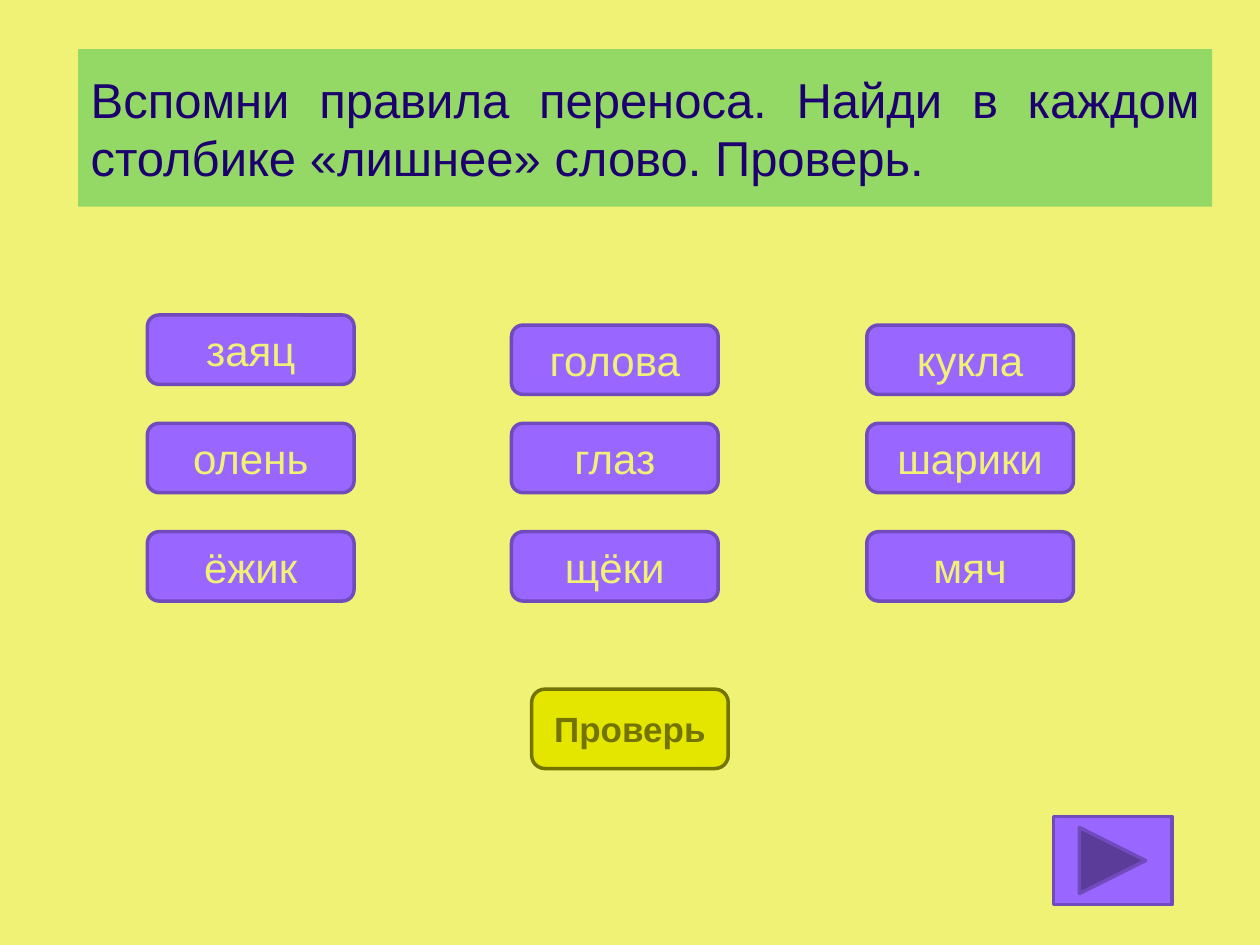
from lxml.etree import SubElement
from pptx import Presentation
from pptx.dml.color import RGBColor
from pptx.enum.shapes import MSO_SHAPE
from pptx.enum.text import MSO_ANCHOR, PP_ALIGN
from pptx.oxml.ns import qn
from pptx.util import Inches, Pt

BACKGROUND = "EFF274"
VIOLET = "9966FF"
VIOLET_LINE = "714BBD"
YELLOW = "E5E600"
OLIVE = "737300"


def color(value):
    return RGBColor.from_string(value)


class ExerciseSlide:
    font_name = "Arial"
    line_width = Pt(2)

    def __init__(self, presentation):
        self.slide = presentation.slides.add_slide(presentation.slide_layouts[5])
        fill = self.slide.background.fill
        fill.solid()
        fill.fore_color.rgb = color(BACKGROUND)

    def add_text(self, shape, text, size, text_color, alignment, bold=False):
        frame = shape.text_frame
        frame.word_wrap = True
        frame.vertical_anchor = MSO_ANCHOR.MIDDLE
        paragraph = frame.paragraphs[0]
        paragraph.alignment = alignment
        run = paragraph.add_run()
        run.text = text
        run.font.name = self.font_name
        run.font.size = Pt(size)
        run.font.bold = bold
        run.font.color.rgb = color(text_color)

    def title(self, text, left, top, width, height):
        shape = self.slide.shapes.title
        shape.left, shape.top = Inches(left), Inches(top)
        shape.width, shape.height = Inches(width), Inches(height)
        shape.fill.solid()
        shape.fill.fore_color.rgb = color("00B050")
        fill_color = shape.element.spPr.find(qn("a:solidFill"))[0]
        SubElement(fill_color, qn("a:alpha"), val="38000")
        self.add_text(shape, text, 28, "1C006E", PP_ALIGN.JUSTIFY)

    def shape(self, kind, left, top, width, height, fill, line):
        shape = self.slide.shapes.add_shape(
            kind, Inches(left), Inches(top), Inches(width), Inches(height)
        )
        shape.shadow.inherit = False
        shape.fill.solid()
        shape.fill.fore_color.rgb = color(fill)
        shape.line.color.rgb = color(line)
        shape.line.width = self.line_width
        return shape

    def word(self, text, left, top):
        shape = self.shape(MSO_SHAPE.ROUNDED_RECTANGLE, left, top, 1.64, 0.55, VIOLET, VIOLET_LINE)
        self.add_text(shape, text, 24, BACKGROUND, PP_ALIGN.CENTER)

    def check_button(self, text, left, top):
        shape = self.shape(MSO_SHAPE.ROUNDED_RECTANGLE, left, top, 1.56, 0.63, YELLOW, OLIVE)
        self.add_text(shape, text, 20, OLIVE, PP_ALIGN.CENTER, bold=True)

    def next_button(self, left, top):
        self.shape(
            MSO_SHAPE.ACTION_BUTTON_FORWARD_OR_NEXT, left, top, 0.94, 0.7, VIOLET, VIOLET_LINE
        )


def main():
    presentation = Presentation()
    presentation.slide_width = Inches(10)
    presentation.slide_height = Inches(7.5)
    exercise = ExerciseSlide(presentation)
    exercise.title(
        "Вспомни правила переноса. Найди в каждом столбике «лишнее» слово. Проверь.",
        0.62, 0.39, 9, 1.25,
    )
    columns = [
        (1.17, 2.5, ["заяц", "олень", "ёжик"]),
        (4.06, 2.58, ["голова", "глаз", "щёки"]),
        (6.88, 2.58, ["кукла", "шарики", "мяч"]),
    ]
    for left, first_top, words in columns:
        for text, top in zip(words, [first_top, 3.36, 4.22]):
            exercise.word(text, left, top)
    exercise.check_button("Проверь", 4.22, 5.47)
    exercise.next_button(8.36, 6.48)
    presentation.save("out.pptx")


if __name__ == "__main__":
    main()
